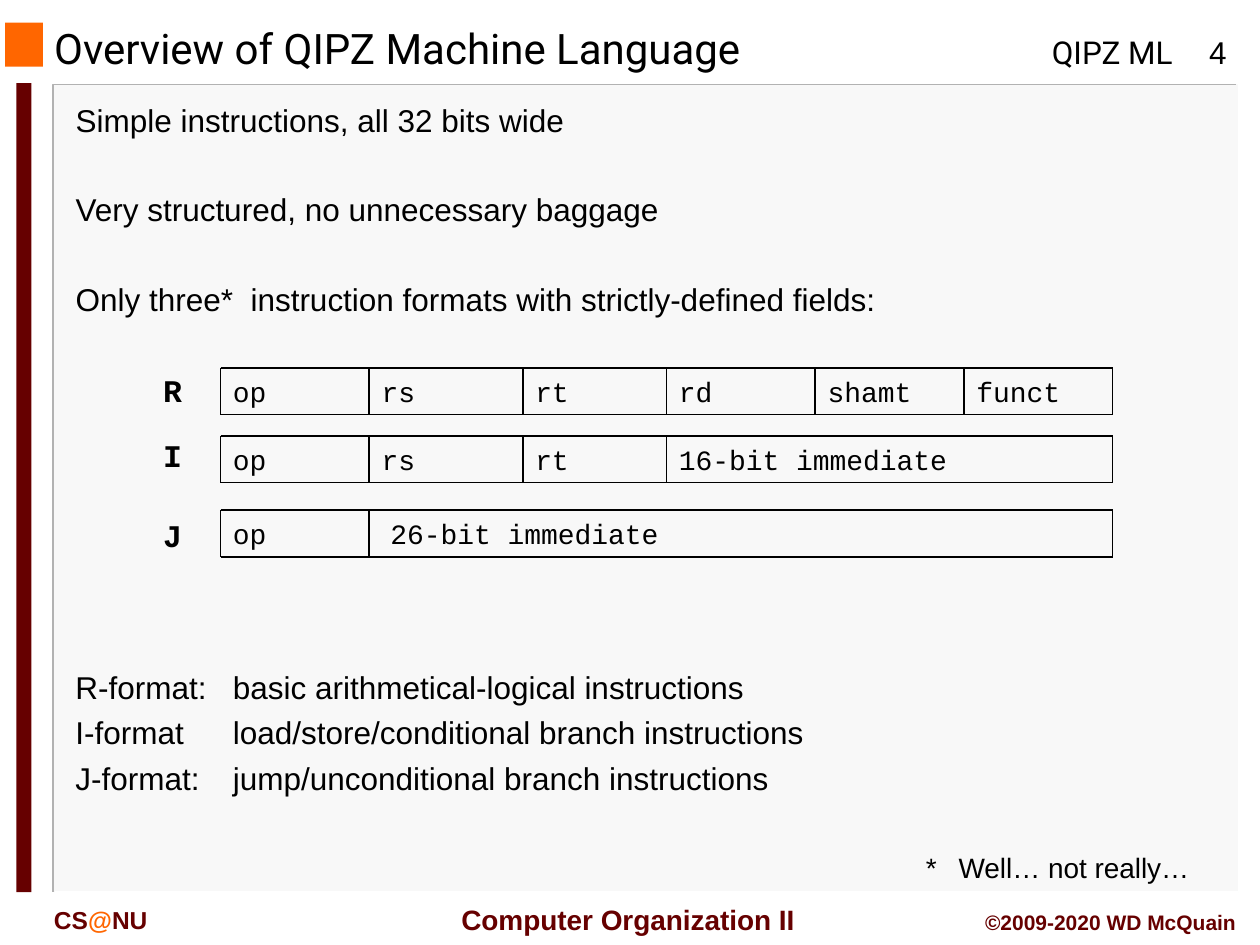
from lxml.etree import SubElement
from pptx import Presentation
from pptx.dml.color import RGBColor
from pptx.enum.shapes import MSO_CONNECTOR, MSO_SHAPE
from pptx.enum.text import MSO_ANCHOR, MSO_AUTO_SIZE, PP_ALIGN
from pptx.oxml.ns import qn
from pptx.util import Inches, Pt

COLORS = {"black": "000000", "maroon": "660000", "orange": "FF6600",
          "panel": "F8F8F8", "edge": "B2B2B2", "white": "FFFFFF"}


def write(shape, paragraphs, size, font="Arial", color="black", bold=False,
          align=PP_ALIGN.LEFT, anchor=MSO_ANCHOR.TOP, gap=0, insets=(0.1, 0.05)):
    """Fill a shape with paragraphs; a list item may be a list of (text, color) runs."""
    frame = shape.text_frame
    side, end = (Inches(inset) for inset in insets)
    frame_format = {"word_wrap": True, "auto_size": MSO_AUTO_SIZE.NONE,
                    "vertical_anchor": anchor, "margin_left": side,
                    "margin_right": side, "margin_top": end, "margin_bottom": end}
    for name, value in frame_format.items():
        setattr(frame, name, value)
    for index, content in enumerate(paragraphs):
        paragraph = frame.paragraphs[0] if index == 0 else frame.add_paragraph()
        paragraph.alignment = align
        paragraph.space_before = Pt(gap if index else 0)
        for text, run_color in [(content, color)] if isinstance(content, str) else content:
            run = paragraph.add_run()
            run.text = text
            for name, value in {"size": Pt(size), "name": font, "bold": bold}.items():
                setattr(run.font, name, value)
            run.font.color.rgb = RGBColor.from_string(COLORS[run_color])
    return frame


def add_line(shapes, x1, y1, x2, y2):
    line = shapes.add_connector(MSO_CONNECTOR.STRAIGHT,
                                Inches(x1), Inches(y1), Inches(x2), Inches(y2))
    line.line.color.rgb = RGBColor.from_string(COLORS["black"])
    line.line.width = Pt(1)
    SubElement(line.element.spPr, qn("a:effectLst"))


presentation = Presentation()
presentation.slide_width, presentation.slide_height = Inches(10), Inches(7.5)
slide = presentation.slides.add_slide(presentation.slide_layouts[1])
shapes = slide.shapes

# Frame: panel, title square and side bar
for box, color in [((0.43, 0.67, 9.4, 6.41), "panel"),
                   ((0.04, 0.18, 0.3, 0.35), "orange"),
                   ((0.13, 0.66, 0.12, 6.42), "maroon")]:
    block = shapes.add_shape(MSO_SHAPE.RECTANGLE, *map(Inches, box))
    block.shadow.inherit = False
    block.fill.solid()
    block.fill.fore_color.rgb = RGBColor.from_string(COLORS[color])
    block.line.fill.background()

for points, color in [([(9.81, 0.67), (0.42, 0.67), (0.42, 7.08)], "edge"),
                      ([(9.83, 0.67), (9.83, 7.08), (0.44, 7.08)], "white")]:
    corners = [(Inches(x), Inches(y)) for x, y in points]
    builder = shapes.build_freeform(*corners[0])
    builder.add_line_segments(corners[1:], close=False)
    panel_edge = builder.convert_to_shape()
    panel_edge.shadow.inherit = False
    panel_edge.fill.background()
    panel_edge.line.color.rgb = RGBColor.from_string(COLORS[color])
    panel_edge.line.width = Pt(1)

# Header and footer
footer = {"color": "maroon", "bold": True}
for box, text, text_format in [
    ((8.25, 0.21, 1.24, 0.4), "QIPZ ML", {"size": 18, "font": "Roboto"}),
    ((9.33, 0.21, 0.67, 0.4), "4", {"size": 18, "align": PP_ALIGN.CENTER}),
    ((3.51, 7.11, 2.95, 0.37), "Computer Organization II",
     {"size": 16, "align": PP_ALIGN.CENTER, "anchor": MSO_ANCHOR.MIDDLE, **footer}),
    ((0.33, 7.13, 1.5, 0.33), [("CS", "maroon"), ("@", "orange"), ("NU", "maroon")],
     {"size": 14, **footer}),
    ((7.33, 7.17, 2.58, 0.3), "©2009-2020 WD McQuain",
     {"size": 12, "align": PP_ALIGN.RIGHT, **footer}),
]:
    write(shapes.add_textbox(*map(Inches, box)), [text], **text_format)

# Title and main points, brought in front of the panel
title, body = shapes.title, slide.placeholders[1]
for placeholder, box in [(title, (0.33, 0.19, 6.33, 0.38)), (body, (0.5, 0.75, 9.25, 1.84))]:
    placeholder.left, placeholder.top, placeholder.width, placeholder.height = map(Inches, box)
    placeholder.element.getparent().append(placeholder.element)
write(title, ["Overview of QIPZ Machine Language"], 24, "Roboto", anchor=MSO_ANCHOR.MIDDLE)
points_frame = write(body, [
    "Simple instructions, all 32 bits wide",
    "Very structured, no unnecessary baggage",
    "Only three*  instruction formats with strictly-defined fields:",
], 18, gap=29.5)
for paragraph in points_frame.paragraphs:
    properties = paragraph._p.get_or_add_pPr()
    properties.set("marL", str(Inches(0.38)))
    properties.set("indent", str(-Inches(0.38)))
    SubElement(properties, qn("a:buNone"))

# Meaning of each format
meanings = write(shapes.add_textbox(*map(Inches, (0.5, 5.25, 9.25, 1.12))), [
    "R-format:\tbasic arithmetical-logical instructions",
    "I-format\tload/store/conditional branch instructions",
    "J-format:\tjump/unconditional branch instructions",
], 18, gap=4.4)
for paragraph in meanings.paragraphs:
    tabs = SubElement(paragraph._p.get_or_add_pPr(), qn("a:tabLst"))
    SubElement(tabs, qn("a:tab"), pos=str(Inches(1.25)), algn="l")

# Instruction formats: name, label top, bar top, fields
edges = [1.75, 2.93, 4.15, 5.29, 6.47, 7.65]
right, bar_height = 8.83, 0.37
for name, label_top, top, fields in [
    ("R", 2.92, 2.92, ["op", "rs", "rt", "rd", "shamt", "funct"]),
    ("I", 3.44, 3.46, ["op", "rs", "rt", "16-bit immediate"]),
    ("J", 4.07, 4.05, ["op", "26-bit immediate"]),
]:
    label = shapes.add_textbox(*map(Inches, (1.15, label_top, 0.44, 0.35)))
    label_frame = write(label, [name], 18, "Courier New", bold=True,
                        align=PP_ALIGN.CENTER, insets=(0.02, 0.03))
    label_frame.paragraphs[0].line_spacing = Pt(21)
    bounds = edges[:len(fields)] + [right]
    for field, left, end in zip(fields, bounds, bounds[1:]):
        shift = 0.07 if field.startswith("26") else 0
        cell = shapes.add_textbox(*map(Inches, (left + shift, top, end - left - shift, bar_height)))
        write(cell, [field], 16, "Courier New")
    for y in (top, top + bar_height):
        add_line(shapes, bounds[0], y, right, y)
    for x in bounds:
        add_line(shapes, x, top, x, top + bar_height)

# Footnote with a hanging indent
footnote = write(shapes.add_textbox(*map(Inches, (7.25, 6.7, 2.42, 0.37))),
                 ["*\tWell… not really…"], 16)
properties = footnote.paragraphs[0]._p.get_or_add_pPr()
properties.set("marL", str(Inches(0.26)))
properties.set("indent", str(-Inches(0.26)))

presentation.save("out.pptx")
